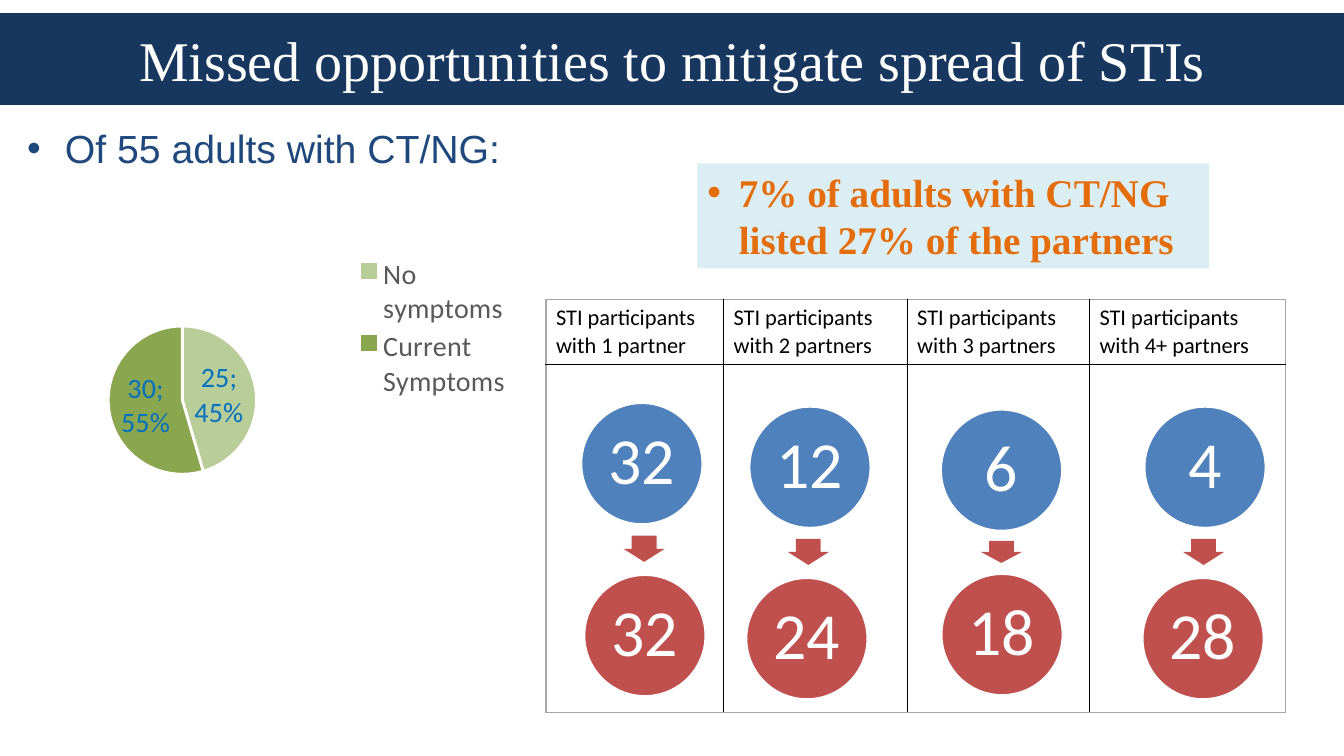
"""Build the slide on missed opportunities to mitigate the spread of STIs."""
import pptx
import pptx.chart.data
import pptx.dml.color
import pptx.enum.chart
import pptx.enum.shapes
import pptx.enum.text
import pptx.oxml
import pptx.util
from pptx.oxml.ns import nsdecls, qn

Pt = pptx.util.Pt
RGBColor = pptx.dml.color.RGBColor
MSO_SHAPE = pptx.enum.shapes.MSO_SHAPE
PP_ALIGN = pptx.enum.text.PP_ALIGN
MSO_ANCHOR = pptx.enum.text.MSO_ANCHOR

NAVY = RGBColor(0x17, 0x37, 0x5E)
BODY_BLUE = RGBColor(0x1F, 0x49, 0x7D)
BLUE = RGBColor(0x4F, 0x81, 0xBD)
RED = RGBColor(0xC0, 0x50, 0x4D)
ORANGE = RGBColor(0xE4, 0x6C, 0x0A)
PALE_BLUE = RGBColor(0xDB, 0xEE, 0xF4)
LABEL_BLUE = RGBColor(0x00, 0x70, 0xC0)
LEGEND_GRAY = RGBColor(0x59, 0x59, 0x59)
EDGE_GRAY = RGBColor(0xA6, 0xA6, 0xA6)
PIE_GREENS = [RGBColor(0xB8, 0xCD, 0x97), RGBColor(0x8A, 0xA6, 0x4F)]
WHITE = RGBColor(0xFF, 0xFF, 0xFF)
BLACK = RGBColor(0, 0, 0)


def style_text(p, font, size, color, bold=False, bullet_indent=None):
    if bullet_indent:
        pPr = p._p.get_or_add_pPr()
        pPr.set("marL", str(Pt(bullet_indent)))
        pPr.set("indent", str(-Pt(bullet_indent)))
        for xml in ('<a:buFont %s typeface="Arial"/>', '<a:buChar %s char="•"/>'):
            pPr.append(pptx.oxml.parse_xml(xml % nsdecls("a")))
    p.space_before = Pt(0)
    for r in p.runs:
        r.font.name = font
        r.font.size = Pt(size)
        r.font.bold = bold
        r.font.color.rgb = color


def add_filled(kind, left, top, width, height, color):
    s = slide.shapes.add_shape(kind, Pt(left), Pt(top), Pt(width), Pt(height))
    s.shadow.inherit = False
    s.fill.solid()
    s.fill.fore_color.rgb = color
    s.line.fill.background()
    return s


prs = pptx.Presentation()
prs.slide_width, prs.slide_height = Pt(960), Pt(540)
slide = prs.slides.add_slide(prs.slide_layouts[1])

title = slide.shapes.title
title.left, title.top, title.width, title.height = Pt(0), Pt(9.4), Pt(960), Pt(65.5)
title.fill.solid()
title.fill.fore_color.rgb = NAVY
tf = title.text_frame
tf.text = "Missed opportunities to mitigate spread of STIs"
tf.auto_size = pptx.enum.text.MSO_AUTO_SIZE.NONE
tf.vertical_anchor = MSO_ANCHOR.MIDDLE
tf.paragraphs[0].alignment = PP_ALIGN.CENTER
style_text(tf.paragraphs[0], "Times New Roman", 40, WHITE)

body = slide.placeholders[1]
body.left, body.top, body.width, body.height = Pt(12.2), Pt(85), Pt(369.4), Pt(430)
tf = body.text_frame
tf.text = "Of 55 adults with CT/NG:"
tf.auto_size = pptx.enum.text.MSO_AUTO_SIZE.NONE
style_text(tf.paragraphs[0], "Arial", 28, BODY_BLUE, bullet_indent=27)

headers = ["1 partner", "2 partners", "3 partners", "4+ partners"]
table = slide.shapes.add_table(2, 4, Pt(390), Pt(213.8), Pt(528), Pt(290)).table
table.first_row = table.horz_banding = False
for column, width in zip(table.columns, [126.8, 131.2, 130.2, 139.8]):
    column.width = Pt(width)
for row, height in zip(table.rows, [46, 249]):
    row.height = Pt(height)
for i in range(2):
    for j, header in enumerate(headers):
        cell = table.cell(i, j)
        cell.fill.background()
        if i == 0:
            cell.text = f"STI participants with {header}"
            style_text(cell.text_frame.paragraphs[0], "Calibri", 16, BLACK)
        outer = {"lnL": j == 0, "lnR": j == 3, "lnT": i == 0, "lnB": i == 1}
        for k, (side, is_edge) in enumerate(outer.items()):
            color = EDGE_GRAY if is_edge else BLACK
            cell._tc.get_or_add_tcPr().insert(k, pptx.oxml.parse_xml(
                f'<a:{side} {nsdecls("a")} w="{Pt(1)}"><a:solidFill>'
                f'<a:srgbClr val="{color}"/></a:solidFill></a:{side}>'))

DIAMETER = 87.1
ARROW_WIDTH = 29.5
flows = [
    (("32", 414.9, 287.6), ("32", 417.1, 410.4), (460.1, 392, 18.7)),
    (("12", 535, 290.2), ("24", 532.8, 412.6), (577.4, 394.2, 18.7)),
    (("6", 671.8, 292.3), ("18", 672.2, 409.7), (715.3, 394.2, 15.8)),
    (("4", 817.2, 290.2), ("28", 815.8, 412.6), (859.7, 394.2, 18.7)),
]
for people, partners, (center_x, center_y, height) in flows:
    for (count, left, top), color in ((people, BLUE), (partners, RED)):
        s = add_filled(MSO_SHAPE.OVAL, left, top, DIAMETER, DIAMETER, color)
        s.line.color.rgb = WHITE
        s.line.width = Pt(2)
        tf = s.text_frame
        tf.text = count
        tf.word_wrap = False
        tf.vertical_anchor = MSO_ANCHOR.MIDDLE
        p = tf.paragraphs[0]
        p.alignment = PP_ALIGN.CENTER
        p.line_spacing = 0.9
        style_text(p, "Calibri", 47, WHITE)
    s = add_filled(MSO_SHAPE.DOWN_ARROW, center_x - ARROW_WIDTH / 2,
                   center_y - height / 2, ARROW_WIDTH, height, RED)
    s.adjustments[0], s.adjustments[1] = 0.6, 0.5

callout = add_filled(MSO_SHAPE.RECTANGLE, 498.2, 116.8, 365.6, 75, PALE_BLUE)
tf = callout.text_frame
tf.text = "7% of adults with CT/NG listed 27% of the partners"
tf.word_wrap = True
tf.vertical_anchor = MSO_ANCHOR.TOP
tf.paragraphs[0].alignment = PP_ALIGN.LEFT
style_text(tf.paragraphs[0], "Times New Roman", 28, ORANGE, True, 22.5)

data = pptx.chart.data.CategoryChartData()
data.categories = ["No symptoms ", "Current Symptoms "]
data.add_series("Series 1", [25, 30])
chart = slide.shapes.add_chart(pptx.enum.chart.XL_CHART_TYPE.PIE, Pt(20.2), Pt(115.2),
                               Pt(355), Pt(235.4), data).chart
chart.has_title = False
chart.font.name = "Calibri"
chart.font.size = Pt(10)
chart.has_legend = True
legend = chart.legend
legend.position = pptx.enum.chart.XL_LEGEND_POSITION.RIGHT
legend.include_in_layout = False
legend.font.name = "Calibri"
legend.font.size = Pt(20)
legend.font.color.rgb = LEGEND_GRAY

plot = chart.plots[0]
plot.vary_by_categories = True
for i, color in enumerate(PIE_GREENS):
    f = plot.series[0].points[i].format
    f.fill.solid()
    f.fill.fore_color.rgb = color
    f.line.color.rgb = WHITE
    f.line.width = Pt(2)
labels = plot.series[0].data_labels
labels.show_value = labels.show_percentage = True
labels.show_legend_key = False
labels.position = pptx.enum.chart.XL_LABEL_POSITION.CENTER
labels.font.name = "Calibri"
labels.font.size = Pt(20)
labels.font.color.rgb = LABEL_BLUE
separator = pptx.oxml.parse_xml(f'<c:separator {nsdecls("c")}>; </c:separator>')
labels._element.find(qn("c:showBubbleSize")).addnext(separator)

plot_area = chart._chartSpace.chart.plotArea
areas = [
    (plot_area, None, '<c:layoutTarget val="inner"/>', (0.16, 0.5, 0.3, 0.45)),
    (legend._element, "c:legendPos", "", (0.65, 0.28, 0.34, 0.45)),
]
for element, before, target, box in areas:
    for old in element.findall(qn("c:layout")):
        element.remove(old)
    modes = "".join(f'<c:{a}Mode val="edge"/>' for a in "xy")
    sizes = "".join(f'<c:{a} val="{v}"/>' for a, v in zip("xywh", box))
    layout = pptx.oxml.parse_xml(f'<c:layout {nsdecls("c")}><c:manualLayout>{target}'
                                 f'{modes}{sizes}</c:manualLayout></c:layout>')
    if before:
        element.find(qn(before)).addnext(layout)
    else:
        element.insert(0, layout)

prs.save("out.pptx")
